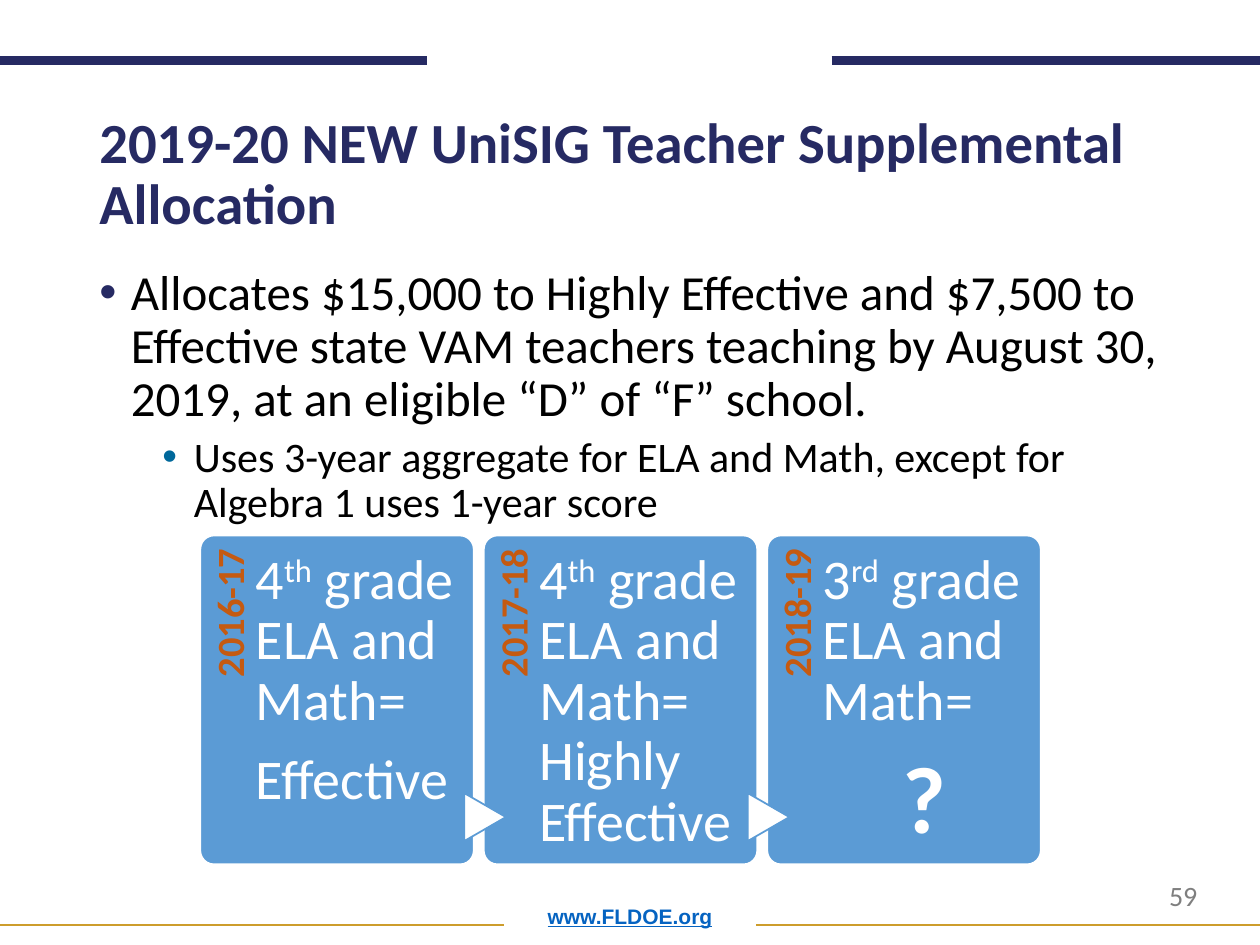
"""Build the UniSIG teacher supplemental allocation slide."""
from lxml.etree import SubElement
from pptx import Presentation
from pptx.dml.color import RGBColor
from pptx.enum.shapes import MSO_CONNECTOR as Connector, MSO_SHAPE as Shape
from pptx.enum.text import MSO_ANCHOR as Anchor, PP_ALIGN as Align
from pptx.oxml.ns import qn
from pptx.util import Pt

EMU_PER_PX = 9144
COLORS = {
    "navy": "262A63", "gold": "CD9D2C", "link": "0563C1", "grey": "7F7F7F",
    "black": "000000", "teal": "00689B", "card": "5B9BD5", "white": "FFFFFF",
    "year": "C55A11",
}
CARD_LEFT, CARD_TOP, CARD_PITCH = 159, 425, 225
CARD_WIDTH, CARD_HEIGHT = 217, 261


def px(length):
    return length * EMU_PER_PX


def rgb(name):
    return RGBColor.from_string(COLORS[name])


def assign(target, values):
    for name, value in values.items():
        setattr(target, name, value)


class SlideBuilder:
    """Hold the text style and the slide being filled."""

    font = "Calibri"
    line_spacing = 0.9

    def __init__(self, slide):
        self.slide = slide

    def line(self, left, right, y, color, weight):
        line = self.slide.shapes.add_connector(
            Connector.STRAIGHT, px(left), px(y), px(right), px(y))
        line.line.color.rgb = rgb(color)
        line.line.width = Pt(weight)
        SubElement(line._element.spPr, qn("a:effectLst"))

    def shape(self, kind, box, fill, outline, rotation=0):
        shape = self.slide.shapes.add_shape(kind, *map(px, box))
        shape.shadow.inherit = False
        shape.fill.solid()
        shape.fill.fore_color.rgb = rgb(fill)
        shape.line.color.rgb = rgb(outline)
        shape.line.width = Pt(1)
        shape.rotation = rotation
        return shape

    def text(self, box, paragraphs, anchor=Anchor.TOP, insets=(10, 5, 10, 5), rotation=0):
        shape = self.slide.shapes.add_textbox(*map(px, box))
        shape.rotation = rotation
        frame = shape.text_frame
        sides = ("margin_left", "margin_top", "margin_right", "margin_bottom")
        assign(frame, {"word_wrap": True, "vertical_anchor": anchor,
                       **dict(zip(sides, map(px, insets)))})
        for index, content in enumerate(paragraphs):
            paragraph = frame.add_paragraph() if index else frame.paragraphs[0]
            self.fill_paragraph(paragraph, **content)

    def fill_paragraph(self, paragraph, runs, size, color, bold=False, font=None,
                       underline=None, bullet=None, indent=0, **layout):
        if bullet:
            self.bullet(paragraph, bullet, indent)
        assign(paragraph, {"line_spacing": self.line_spacing, **layout})
        for text, baseline in runs:
            run = paragraph.add_run()
            run.text = text
            assign(run.font, {"name": font or self.font, "size": Pt(size),
                              "bold": bold, "underline": underline})
            run.font.color.rgb = rgb(color)
            if baseline:
                run.font._element.set("baseline", str(baseline * 1000))

    def bullet(self, paragraph, color, indent):
        properties = paragraph._p.get_or_add_pPr()
        properties.set("marL", str(px(indent)))
        properties.set("indent", str(px(-25)))
        bullet_color = SubElement(properties, qn("a:buClr"))
        SubElement(bullet_color, qn("a:srgbClr"), val=COLORS[color])
        SubElement(properties, qn("a:buFont"), typeface="Arial")
        SubElement(properties, qn("a:buChar"), char="•")

    def card(self, left, year, paragraphs, arrow):
        card = self.shape(Shape.ROUNDED_RECTANGLE,
                          (left, CARD_TOP, CARD_WIDTH, CARD_HEIGHT), "card", "white")
        card.adjustments[0] = 0.05
        self.text((left - 85, 510, 214, 43),
                  [{"runs": [(year, 0)], "size": 22, "color": "year", "bold": True,
                    "alignment": Align.RIGHT}],
                  insets=(0, 8, 11, 0), rotation=270)
        if arrow:
            self.shape(Shape.FLOWCHART_EXTRACT, (left - 18, 632, 38, 33),
                       "white", "card", rotation=90)
        style = {"size": 32, "color": "white", "space_after": Pt(11)}
        self.text((left + 44, CARD_TOP, 162, CARD_HEIGHT),
                  [{**style, **paragraph} for paragraph in paragraphs],
                  insets=(0, 12, 0, 0))


def grade(number, suffix, rest):
    return {"runs": [(number, 0), (suffix, 30), (rest, 0)]}


def main():
    presentation = Presentation()
    presentation.slide_width, presentation.slide_height = px(1000), px(750)
    slide = presentation.slides.add_slide(presentation.slide_layouts[6])
    builder = SlideBuilder(slide)

    builder.text((69, 700, 862, 42),
                 [{"runs": [("www.FLDOE.org", 0)], "size": 12, "color": "link",
                   "bold": True, "underline": True, "font": "Arial",
                   "alignment": Align.CENTER}], anchor=Anchor.BOTTOM)
    for left, right, y, color, weight in (
            (0, 400, 734, "gold", 1), (600, 1000, 734, "gold", 1),
            (0, 339, 48, "navy", 5), (660, 1000, 48, "navy", 5)):
        builder.line(left, right, y, color, weight)
    builder.text((918, 692, 78, 37),
                 [{"runs": [("59", 0)], "size": 16, "color": "grey", "line_spacing": 1.0}])
    builder.text((69, 106, 862, 87),
                 [{"runs": [("2019-20 NEW UniSIG Teacher Supplemental Allocation", 0)],
                   "size": 32.4, "color": "navy", "bold": True}], anchor=Anchor.BOTTOM)
    builder.text((69, 208, 862, 476), [
        {"runs": [("Allocates $15,000 to Highly Effective and $7,500 to Effective state VAM "
                   "teachers teaching by August 30, 2019, at an eligible “D” of “F” school.", 0)],
         "size": 28, "color": "black", "bullet": "navy", "indent": 25},
        {"runs": [("Uses 3-year aggregate for ELA and Math, except for "
                   "Algebra 1 uses 1-year score", 0)],
         "size": 24, "color": "black", "bullet": "teal", "indent": 75,
         "level": 1, "space_before": Pt(5)},
    ])

    cards = (
        ("2016-17", [grade("4", "th", " grade ELA and Math="), {"runs": [("Effective", 0)]}]),
        ("2017-18", [grade("4", "th", " grade ELA and Math= Highly Effective")]),
        ("2018-19", [grade("3", "rd", " grade ELA and Math="),
                     {"runs": [("?", 0)], "size": 54, "bold": True,
                      "alignment": Align.CENTER}]),
    )
    for index, (year, paragraphs) in enumerate(cards):
        builder.card(CARD_LEFT + index * CARD_PITCH, year, paragraphs, arrow=index > 0)

    presentation.save("out.pptx")


if __name__ == "__main__":
    main()
